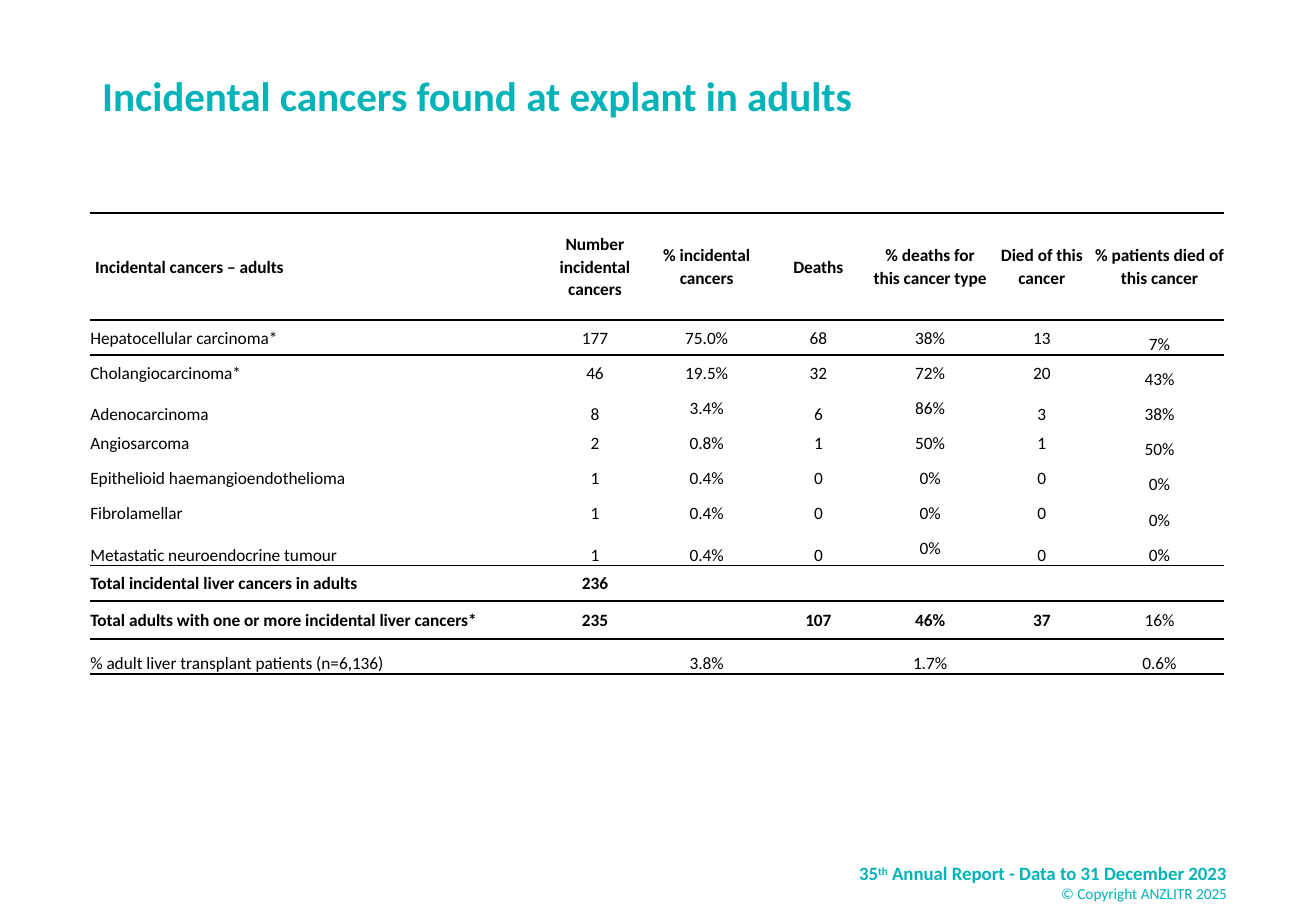
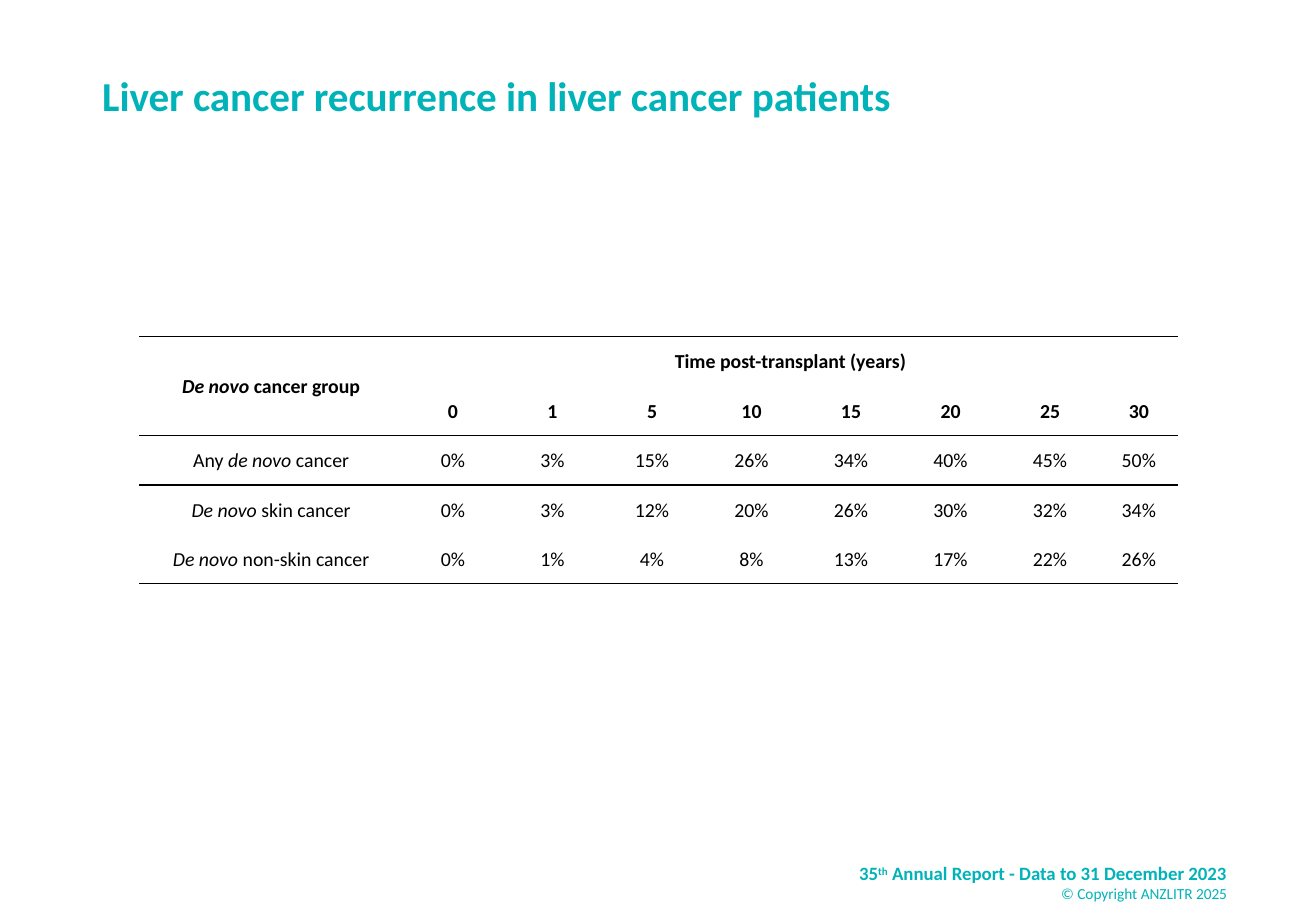
from dataclasses import dataclass

from lxml import etree
from pptx import Presentation
from pptx import util as u
from pptx.dml.color import RGBColor
from pptx.enum import text as t
from pptx.oxml import ns


@dataclass(frozen=True)
class Theme:
    font: str = "Calibri"
    teal: str = "00B3B8"
    ink: str = "000000"
    title_size: float = 24.9
    report_size: float = 11.4
    copyright_size: float = 9.3
    rule_width: float = 1
    line_spacing: float = 1.07
    no_style: str = "{2D5ABB26-0587-4C30-8999-92F81FD0307C}"


THEME = Theme()
SLIDE_SIZE = (11.07, 7.77)
TITLE_BOX = (0.76, 0.28, 9.54, 1.09)
FOOTER_BOX = (6.69, 7.2, 3.73, 0.41)
EXPLANT_BOX = (0.76, 1.79, 9.54, 3.88)
RECURRENCE_BOX = (1.17, 2.83, 8.74, 2.08)

LEFT, CENTRE, RIGHT = t.PP_ALIGN.LEFT, t.PP_ALIGN.CENTER, t.PP_ALIGN.RIGHT
ANCHORS = {"m": t.MSO_ANCHOR.MIDDLE, "b": t.MSO_ANCHOR.BOTTOM}

EXPLANT_HEADER = ["Incidental cancers – adults", "Number incidental cancers",
                  "% incidental cancers", "Deaths", "% deaths for this cancer type",
                  "Died of this cancer", "% patients died of this cancer"]
# Each row: its cells, then one anchor letter per column (m middle, b bottom).
EXPLANT_ROWS = [
    (["Hepatocellular carcinoma*", "177", "75.0%", "68", "38%", "13", "7%"], "mmmmmmb"),
    (["Cholangiocarcinoma*", "46", "19.5%", "32", "72%", "20", "43%"], "mmmmmmb"),
    (["Adenocarcinoma", "8", "3.4%", "6", "86%", "3", "38%"], "bbmbmbb"),
    (["Angiosarcoma", "2", "0.8%", "1", "50%", "1", "50%"], "mmmmmmb"),
    (["Epithelioid haemangioendothelioma", "1", "0.4%", "0", "0%", "0", "0%"], "mmmmmmb"),
    (["Fibrolamellar", "1", "0.4%", "0", "0%", "0", "0%"], "mmmmmmb"),
    (["Metastatic neuroendocrine tumour", "1", "0.4%", "0", "0%", "0", "0%"], "bbbbmbb"),
    (["Total incidental liver cancers in adults", "236", "", "", "", "", ""], "mmmmmmm"),
    (["Total adults with one or more incidental liver cancers*", "235", "", "107", "46%",
      "37", "16%"], "mmmmmmm"),
    (["% adult liver transplant patients (n=6,136)", "", "3.8%", "", "1.7%", "", "0.6%"],
     "bbbbbbb"),
]
TOTAL_ROWS = (8, 9)

# Text between underscores is italic.
RECURRENCE_ROWS = [
    ["_De novo_ cancer group", "Time post-transplant (years)"] + [""] * 7,
    ["", "0", "1", "5", "10", "15", "20", "25", "30"],
    ["Any _de novo_ cancer", "0%", "3%", "15%", "26%", "34%", "40%", "45%", "50%"],
    ["_De novo_ skin cancer", "0%", "3%", "12%", "20%", "26%", "30%", "32%", "34%"],
    ["_De novo_ non-skin cancer", "0%", "1%", "4%", "8%", "13%", "17%", "22%", "26%"],
]


def inches(box):
    return [u.Inches(length) for length in box]


def shares(total, weights):
    """Split a length in proportion to the weights."""
    return [round(total * weight / sum(weights)) for weight in weights]


def write(paragraph, content, *, size, color=THEME.ink, bold=False, align=LEFT,
          spacing=None, marked="italic"):
    """Fill a paragraph; parts between underscores are italic or superscript."""
    paragraph.alignment = align
    if spacing:
        paragraph.line_spacing = spacing
    for index, part in enumerate(content.split("_")):
        if not part:
            continue
        run = paragraph.add_run()
        run.text = part
        font = run.font
        font.name, font.size, font.bold = THEME.font, u.Pt(size), bold
        font.color.rgb = RGBColor.from_string(color)
        if index % 2 and marked == "italic":
            font.italic = True
        elif index % 2:
            font._element.set("baseline", "30000")
    if not content:
        end = etree.SubElement(paragraph._p, ns.qn("a:endParaRPr"))
        end.set("sz", str(round(size * 100)))


def add_titled_slide(deck, layout, heading):
    slide = deck.slides.add_slide(layout)
    title = slide.shapes.title
    title.left, title.top, title.width, title.height = inches(TITLE_BOX)
    frame = title.text_frame
    frame.vertical_anchor = t.MSO_ANCHOR.MIDDLE
    frame.auto_size = t.MSO_AUTO_SIZE.NONE
    write(frame.paragraphs[0], heading, size=THEME.title_size, color=THEME.teal,
          bold=True, spacing=0.9)
    return slide


def add_footer(layout, slide):
    """Build the footer on a slide, then hand it to the layout all slides share."""
    footer = slide.shapes.add_textbox(*inches(FOOTER_BOX))
    frame = footer.text_frame
    frame.word_wrap = True
    write(frame.paragraphs[0], "35_th_ Annual Report - Data to 31 December 2023",
          size=THEME.report_size, color=THEME.teal, bold=True, align=RIGHT,
          marked="superscript")
    write(frame.add_paragraph(), "© Copyright ANZLITR 2025", size=THEME.copyright_size,
          color=THEME.teal, align=RIGHT)
    layout.shapes.element.append(footer.element)


def draw_rule(cell, side):
    line = etree.SubElement(cell._tc.get_or_add_tcPr(), ns.qn(f"a:ln{side}"))
    line.set("w", str(u.Pt(THEME.rule_width)))
    fill = etree.SubElement(line, ns.qn("a:solidFill"))
    etree.SubElement(fill, ns.qn("a:srgbClr")).set("val", THEME.ink)


def add_ruled_table(slide, box, column_weights, row_weights, rules):
    """Add a plain table; rules are the row boundaries that carry a line."""
    left, top, width, height = inches(box)
    table = slide.shapes.add_table(len(row_weights), len(column_weights),
                                   left, top, width, height).table
    table.first_row = table.horz_banding = False
    table._tbl.tblPr.find(ns.qn("a:tableStyleId")).text = THEME.no_style
    for column, share in zip(table.columns, shares(width, column_weights)):
        column.width = share
    for index, (row, share) in enumerate(zip(table.rows, shares(height, row_weights))):
        row.height = share
        for cell in row.cells:
            cell.margin_left = cell.margin_right = 0
            cell.margin_top = cell.margin_bottom = 0
            for side, boundary in (("T", index), ("B", index + 1)):
                if boundary in rules:
                    draw_rule(cell, side)
            cell.fill.background()
    return table


def fill_cell(cell, content, *, anchor="m", **style):
    cell.vertical_anchor = ANCHORS[anchor]
    write(cell.text_frame.paragraphs[0], content, spacing=THEME.line_spacing, **style)


def add_explant_table(slide):
    body = (EXPLANT_BOX[3] - 0.9 - 0.32) / 9
    heights = [0.9] + [body] * 7 + [body, 0.32, body]
    table = add_ruled_table(slide, EXPLANT_BOX, [3.8, 0.89, 0.99, 0.89, 0.99, 0.89, 1.09],
                            heights, rules=(0, 1, 8, 10, 11))
    last = len(EXPLANT_HEADER) - 1
    for r, (values, anchors) in enumerate([(EXPLANT_HEADER, "m" * 7)] + EXPLANT_ROWS):
        for c, (value, anchor) in enumerate(zip(values, anchors)):
            fill_cell(table.cell(r, c), value, anchor=anchor, size=10.5,
                      bold=r == 0 or (r in TOTAL_ROWS and c < last),
                      align=CENTRE if c else LEFT)
    table.cell(0, 0).margin_left = u.Inches(0.04)


def add_recurrence_table(slide):
    table = add_ruled_table(slide, RECURRENCE_BOX, [2.23] + [0.84] * 7 + [0.66],
                            [1] * len(RECURRENCE_ROWS), rules=(0, 2, 5))
    table.cell(0, 0).merge(table.cell(1, 0))
    table.cell(0, 1).merge(table.cell(0, 8))
    for r, values in enumerate(RECURRENCE_ROWS):
        for c, value in enumerate(values):
            fill_cell(table.cell(r, c), value, size=12, bold=r < 2, align=CENTRE)


def main():
    deck = Presentation()
    deck.slide_width, deck.slide_height = inches(SLIDE_SIZE)
    layout = deck.slide_layouts[5]

    explant = add_titled_slide(deck, layout, "Incidental cancers found at explant in adults")
    add_footer(layout, explant)
    add_explant_table(explant)

    recurrence = add_titled_slide(deck, layout,
                                  "Liver cancer recurrence in liver cancer patients")
    add_recurrence_table(recurrence)
    deck.save("out.pptx")


if __name__ == "__main__":
    main()
